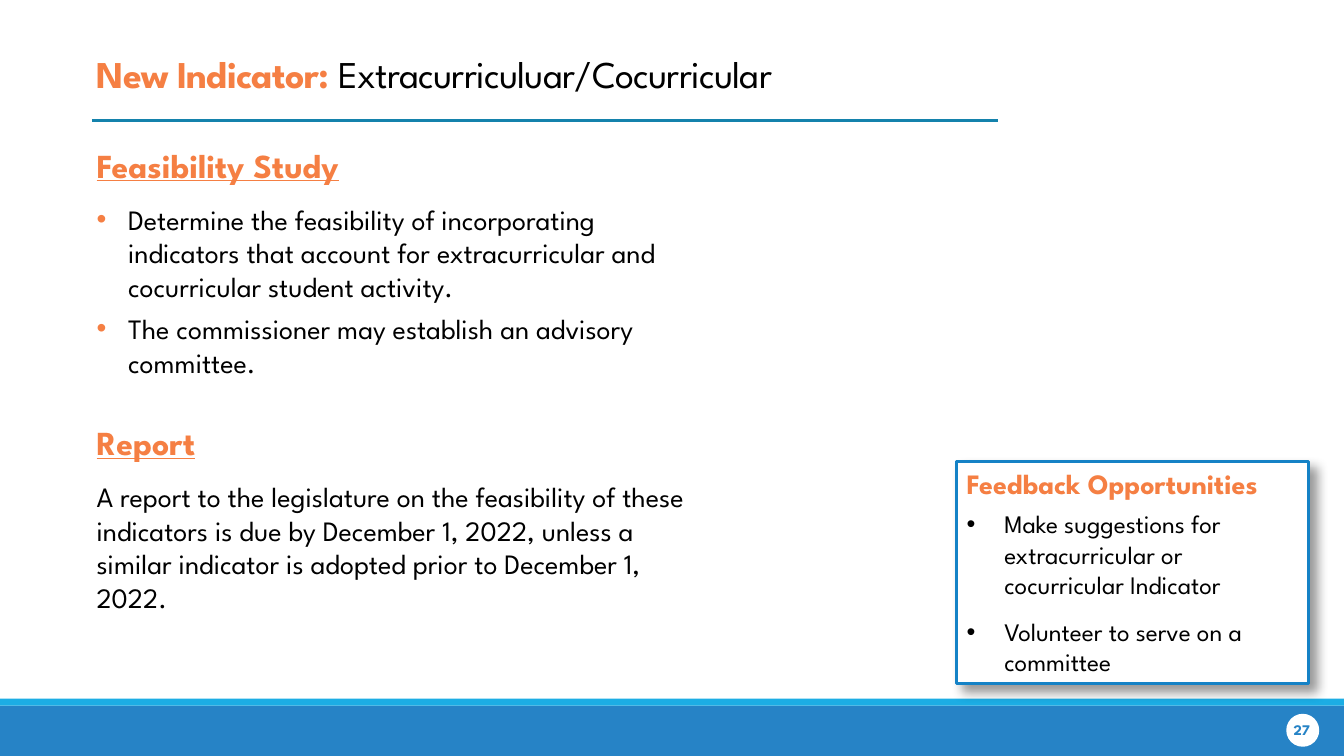
from lxml.etree import SubElement
from pptx import Presentation
from pptx.dml.color import RGBColor
from pptx.enum.shapes import MSO_CONNECTOR, MSO_SHAPE
from pptx.enum.text import MSO_ANCHOR, MSO_AUTO_SIZE, PP_ALIGN
from pptx.oxml.ns import qn
from pptx.util import Pt

WHITE = RGBColor(0xFF, 0xFF, 0xFF)
BLACK = RGBColor(0x00, 0x00, 0x00)
ORANGE = RGBColor(0xF5, 0x7F, 0x43)
BLUE = RGBColor(0x26, 0x83, 0xC6)
SKY = RGBColor(0x1C, 0xAD, 0xE4)
TEAL = RGBColor(0x14, 0x82, 0xAC)
BORDER = RGBColor(0x15, 0x82, 0xC6)


def para(*runs, **fmt):
    """Describe a paragraph by its runs and its format."""
    return runs, fmt


def run(text, size=20, color=BLACK, bold=False, underline=False, spacing=0):
    """Describe a run of text by its format."""
    return text, size, color, bold, underline, spacing


class Slide:
    """Holds the style and the current slide, and draws each kind of element."""

    font = "League Spartan"

    def __init__(self, prs):
        self.shapes = prs.slides.add_slide(prs.slide_layouts[6]).shapes

    def shape(self, kind, x, y, w, h, fill, line=None, width=1.25):
        sp = self.shapes.add_shape(kind, Pt(x), Pt(y), Pt(w), Pt(h))
        sp.shadow.inherit = False
        sp.fill.solid()
        sp.fill.fore_color.rgb = fill
        if line is None:
            sp.line.fill.background()
        else:
            sp.line.color.rgb = line
            sp.line.width = Pt(width)
        return sp

    def rule(self, x1, x2, y, color, width):
        cxn = self.shapes.add_connector(MSO_CONNECTOR.STRAIGHT, Pt(x1), Pt(y), Pt(x2), Pt(y))
        cxn.line.color.rgb = color
        cxn.line.width = Pt(width)
        SubElement(cxn._element.spPr, qn("a:effectLst"))

    def shadow(self, sp, blur, dist, angle, alpha):
        effects = sp._element.spPr.find(qn("a:effectLst"))
        outer = SubElement(effects, qn("a:outerShdw"), blurRad=str(Pt(blur)), dist=str(Pt(dist)),
                           dir=str(angle * 60000), algn="tl", rotWithShape="0")
        clr = SubElement(outer, qn("a:srgbClr"), val=str(BLACK))
        SubElement(clr, qn("a:alpha"), val=str(alpha * 1000))

    def text(self, x, y, w, h, *paras, **fmt):
        box = self.shapes.add_textbox(Pt(x), Pt(y), Pt(w), Pt(h))
        self.fill_text(box, *paras, **fmt)

    def fill_text(self, sp, *paras, grow=False, anchor=MSO_ANCHOR.TOP, inset=7.2):
        tf = sp.text_frame
        tf.word_wrap = True
        tf.auto_size = MSO_AUTO_SIZE.SHAPE_TO_FIT_TEXT if grow else MSO_AUTO_SIZE.NONE
        tf.vertical_anchor = anchor
        tf.margin_left = tf.margin_right = Pt(inset)
        for i, (runs, style) in enumerate(paras):
            p = tf.add_paragraph() if i else tf.paragraphs[0]
            self.paragraph(p, runs, **style)

    def paragraph(self, p, runs, align=PP_ALIGN.LEFT, before=0, after=0, indent=0, bullet=BLACK):
        p.alignment = align
        p.space_before = Pt(before)
        p.space_after = Pt(after)
        if indent:
            pPr = p._p.get_or_add_pPr()
            pPr.set("marL", str(Pt(indent)))
            pPr.set("indent", str(-Pt(indent)))
            SubElement(SubElement(pPr, qn("a:buClr")), qn("a:srgbClr"), val=str(bullet))
            SubElement(pPr, qn("a:buFont"), typeface="Arial")
            SubElement(pPr, qn("a:buChar"), char="•")
        for text, size, color, bold, underline, spacing in runs:
            r = p.add_run()
            r.text = text
            r.font.name = self.font
            r.font.size = Pt(size)
            r.font.color.rgb = color
            r.font.bold = bold
            r.font.underline = underline
            if spacing:
                r._r.get_or_add_rPr().set("spc", str(int(spacing * 100)))


def main():
    """Build the slide and save it."""
    prs = Presentation()
    prs.slide_width, prs.slide_height = Pt(960), Pt(540)
    s = Slide(prs)

    s.shape(MSO_SHAPE.RECTANGLE, 0, 504, 960, 36, BLUE)
    s.shape(MSO_SHAPE.RECTANGLE, 0, 499, 960, 5, SKY)
    s.rule(65.7, 712.8, 85.9, TEAL, 2.25)
    s.text(61.9, 32.4, 665.3, 45.4, para(
        run("New Indicator: ", 27, ORANGE, bold=True, spacing=-0.5),
        run("Extracurriculuar/Cocurricular", 27, spacing=-0.5)))

    heading = {"size": 24, "color": ORANGE, "bold": True, "underline": True}
    item = {"after": 6, "indent": 22.5, "bullet": ORANGE}
    s.text(61.9, 100.1, 443.5, 175.7,
           para(run("Feasibility Study", **heading), after=12),
           para(run("Determine the feasibility of incorporating indicators that account for "
                    "extracurricular and cocurricular student activity."), **item),
           para(run("The commissioner may establish an advisory committee."), **item),
           grow=True)
    s.text(61.9, 298.1, 434.9, 145.4,
           para(run("Report", **heading), after=12),
           para(run("A report to the legislature on the feasibility of these indicators is due by "
                    "December 1, 2022, unless a similar indicator is adopted prior to "
                    "December 1, 2022."), after=6),
           grow=True)

    s.shape(MSO_SHAPE.OVAL, 919.4, 510.5, 22.3, 22.3, WHITE, WHITE)
    s.text(916.6, 506.9, 26.6, 28.8,
           para(run("27", 10.5, BLUE, bold=True), align=PP_ALIGN.CENTER),
           anchor=MSO_ANCHOR.MIDDLE, inset=0)

    feedback = s.shape(MSO_SHAPE.RECTANGLE, 683.3, 329.8, 251.3, 158.4, WHITE, BORDER, 2.25)
    s.shadow(feedback, blur=8, dist=7, angle=45, alpha=40)
    s.fill_text(feedback,
                para(run("Feedback Opportunities", 20, ORANGE, bold=True), after=6),
                para(run("Make suggestions for extracurricular or cocurricular Indicator", 18),
                     indent=27),
                para(run("Volunteer to serve on a committee", 18), before=12, indent=27),
                grow=True)

    prs.save("out.pptx")


if __name__ == "__main__":
    main()
